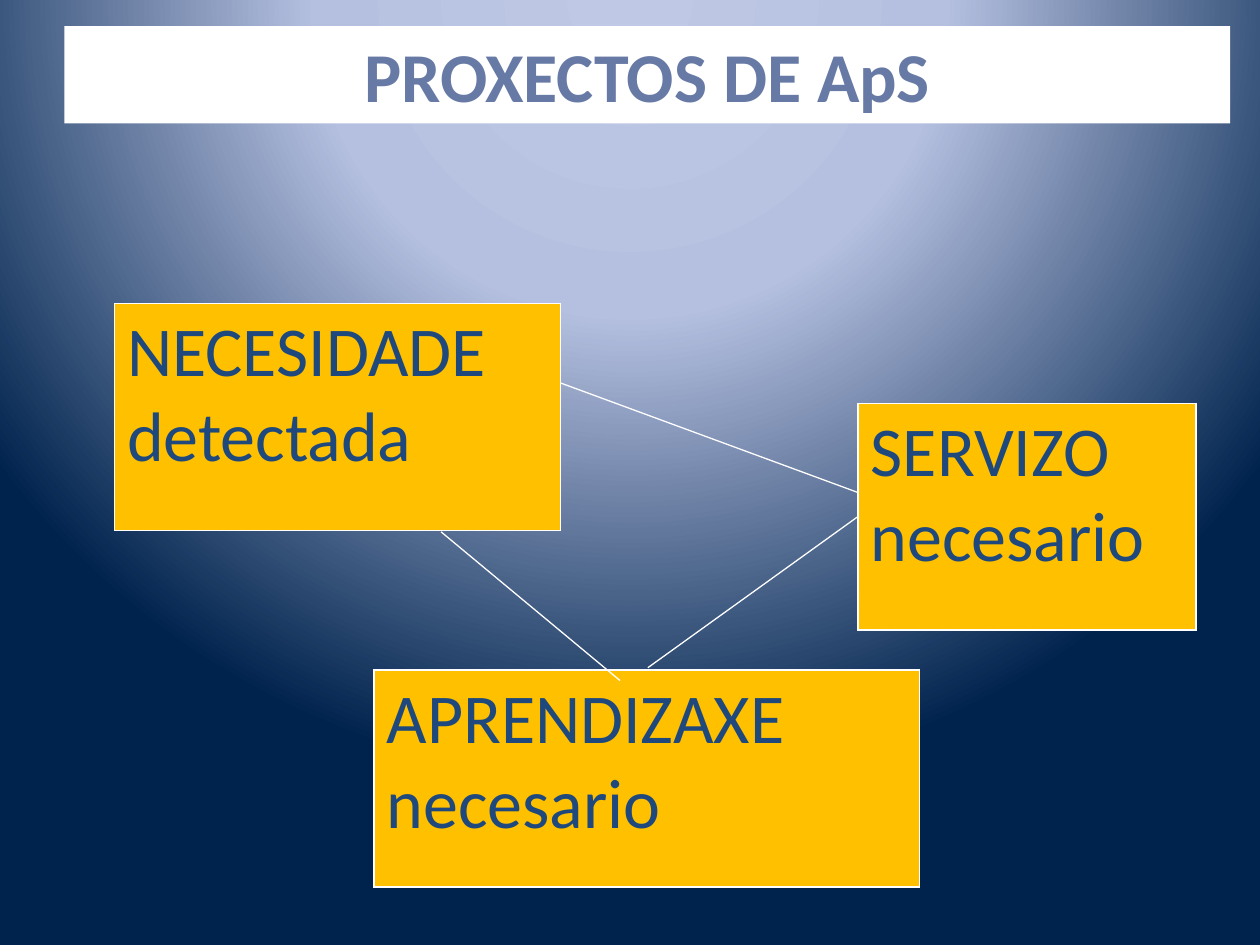
from lxml.etree import SubElement
from pptx import Presentation
from pptx.dml.color import RGBColor
from pptx.enum.shapes import MSO_CONNECTOR as Connector, MSO_SHAPE as Shape
from pptx.enum.text import MSO_ANCHOR as Anchor, PP_ALIGN as Align
from pptx.oxml import parse_xml
from pptx.oxml.ns import nsdecls, qn
from pptx.util import Cm, Pt

FONT = "Calibri"
TEXT_SIZE = Pt(40)
WHITE = RGBColor(0xFF, 0xFF, 0xFF)
AMBER = RGBColor(0xFF, 0xC0, 0x00)
NAVY = RGBColor(0x1F, 0x49, 0x7D)
SLATE = RGBColor(0x67, 0x7A, 0xA5)
GLOW = [
    (0, RGBColor(0xBF, 0xC9, 0xE5)),
    (40, RGBColor(0xB5, 0xC0, 0xE0)),
    (100, RGBColor(0x00, 0x23, 0x4D)),
]

# left, top, width, height in cm, then the paragraphs
CARDS = [
    (2.31, 6.12, 8.99, 4.57, ["NECESIDADE", "detectada"]),
    (17.3, 8.13, 6.81, 4.57, ["SERVIZO necesario"]),
    (7.54, 13.51, 11.0, 4.37, ["APRENDIZAXE", "necesario"]),
]
# start x, start y, end x, end y in cm
LINKS = [
    (11.3, 7.72, 17.3, 9.93),
    (8.89, 10.72, 12.5, 13.72),
    (13.06, 13.46, 17.3, 10.41),
]


def set_background(page):
    """Radial glow centred above the top edge."""
    stops = "".join(
        f'<a:gs pos="{position * 1000}"><a:srgbClr val="{color}"/></a:gs>'
        for position, color in GLOW
    )
    page.element.cSld.insert(0, parse_xml(
        f'<p:bg {nsdecls("p", "a")}><p:bgPr><a:gradFill rotWithShape="1">'
        f'<a:gsLst>{stops}</a:gsLst><a:path path="circle">'
        '<a:fillToRect l="50000" t="-80000" r="50000" b="180000"/>'
        '</a:path></a:gradFill><a:effectLst/></p:bgPr></p:bg>'
    ))


def add_text(para, text, color, bold=False):
    span = para.add_run()
    span.text = text
    span.font.name = FONT
    span.font.size = TEXT_SIZE
    span.font.bold = bold
    span.font.color.rgb = color


def set_borders(cell):
    properties = cell._tc.get_or_add_tcPr()
    for index, side in enumerate(("lnL", "lnR", "lnT", "lnB")):
        properties.insert(index, parse_xml(
            f'<a:{side} {nsdecls("a")} w="{Pt(1)}"><a:solidFill>'
            f'<a:srgbClr val="{WHITE}"/></a:solidFill></a:{side}>'
        ))


def add_card(page, left, top, width, height, lines):
    """One-cell table holding a term of the triangle."""
    table = page.shapes.add_table(
        1, 1, Cm(left), Cm(top), Cm(width), Cm(height)).table
    cell = table.cell(0, 0)
    cell.fill.solid()
    cell.fill.fore_color.rgb = AMBER
    set_borders(cell)
    frame = cell.text_frame
    for index, line in enumerate(lines):
        para = frame.add_paragraph() if index else frame.paragraphs[0]
        add_text(para, line, NAVY)


def add_link(page, *ends):
    link = page.shapes.add_connector(
        Connector.STRAIGHT, *(Cm(value) for value in ends))
    link.line.color.rgb = WHITE
    link.line.width = Pt(0.75)
    SubElement(link._element.spPr, qn("a:effectLst"))


def add_title(page, text):
    box = page.shapes.add_shape(
        Shape.RECTANGLE, Cm(1.3), Cm(0.53), Cm(23.5), Cm(1.96))
    box.shadow.inherit = False
    box.fill.solid()
    box.fill.fore_color.rgb = WHITE
    box.line.fill.background()
    frame = box.text_frame
    frame.word_wrap = True
    frame.vertical_anchor = Anchor.TOP
    para = frame.paragraphs[0]
    para.alignment = Align.CENTER
    add_text(para, text, SLATE, bold=True)


def main():
    deck = Presentation()
    deck.slide_width, deck.slide_height = Cm(25.4), Cm(19.05)
    page = deck.slides.add_slide(deck.slide_layouts[6])
    set_background(page)
    for card in CARDS:
        add_card(page, *card)
    for link in LINKS:
        add_link(page, *link)
    add_title(page, "PROXECTOS DE ApS")
    deck.save("out.pptx")


if __name__ == "__main__":
    main()
